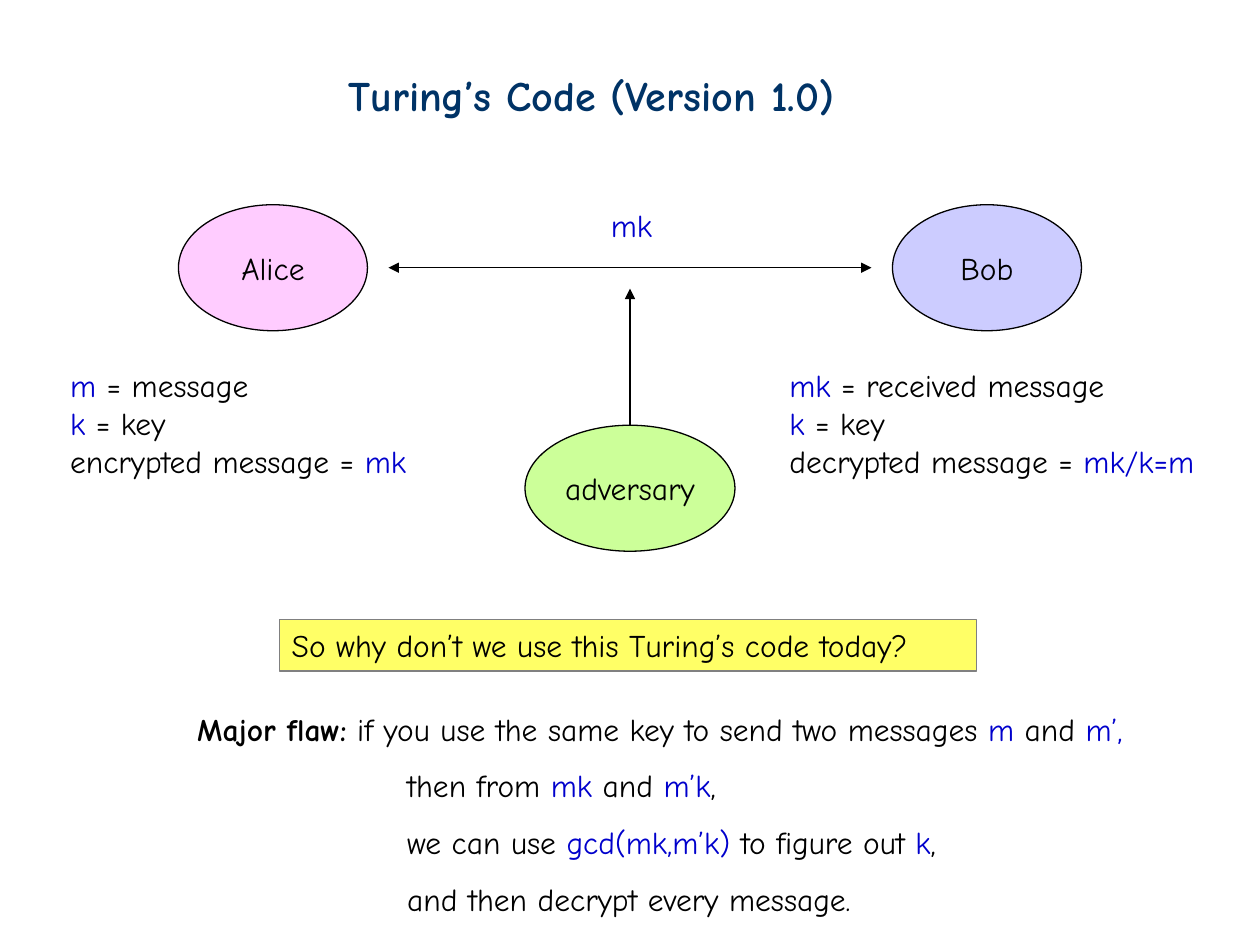
from pptx import Presentation
from pptx.dml.color import RGBColor
from pptx.enum.shapes import MSO_CONNECTOR, MSO_SHAPE
from pptx.enum.text import MSO_ANCHOR, PP_ALIGN
from pptx.oxml.ns import qn
from pptx.util import Inches, Pt
from lxml.etree import SubElement

FONT = "Comic Neue"
BLACK = RGBColor(0x00, 0x00, 0x00)
NAVY = RGBColor(0x00, 0x33, 0x66)
BLUE = RGBColor(0x00, 0x00, 0xCC)
GRAY = RGBColor(0x80, 0x80, 0x80)
PINK = RGBColor(0xFF, 0xCC, 0xFF)
LAVENDER = RGBColor(0xCC, 0xCC, 0xFF)
GREEN = RGBColor(0xCC, 0xFF, 0x99)
YELLOW = RGBColor(0xFF, 0xFF, 0x66)

prs = Presentation()
prs.slide_width, prs.slide_height = Inches(10), Inches(7.5)
slide = prs.slides.add_slide(prs.slide_layouts[6])
shapes = slide.shapes
CELL = prs.slide_width / 120  # grid of 120 columns by 90 rows


def cells(*counts):
    return [round(count * CELL) for count in counts]


def write(frame, lines, size=18, color=BLACK):
    """Fill a frame; within a line, every second part between bars is blue."""
    for number, line in enumerate(lines):
        paragraph = frame.paragraphs[0] if number == 0 else frame.add_paragraph()
        paragraph.font.name = FONT
        paragraph.font.size = Pt(size)
        for index, part in enumerate(line.split("|")):
            if part:
                run = paragraph.add_run()
                run.text = part
                run.font.color.rgb = BLUE if index % 2 else color


# Title
title = shapes.add_textbox(*cells(32, 6, 55.5, 6)).text_frame
title.word_wrap = True
write(title, ["Turing’s Code (Version 1.0)"], 24, NAVY)
title.paragraphs[0].font.bold = True

# Parties, the question, and their outlines
for label, kind, place, fill, outline in [
    ("Alice", MSO_SHAPE.OVAL, (17, 19.5, 18, 12), PINK, BLACK),
    ("Bob", MSO_SHAPE.OVAL, (85, 19.5, 18, 12), LAVENDER, BLACK),
    ("adversary", MSO_SHAPE.OVAL, (50, 40.5, 20, 12), GREEN, BLACK),
    ("So why don’t we use this Turing’s code today?", MSO_SHAPE.RECTANGLE,
     (26.6, 59, 66.4, 4.9), YELLOW, GRAY),
]:
    figure = shapes.add_shape(kind, *cells(*place))
    figure.shadow.inherit = False
    figure.fill.solid()
    figure.fill.fore_color.rgb = fill
    figure.line.color.rgb = outline
    figure.line.width = Pt(0.75)
    frame = figure.text_frame
    is_party = kind == MSO_SHAPE.OVAL
    frame.word_wrap = not is_party
    frame.vertical_anchor = MSO_ANCHOR.MIDDLE if is_party else MSO_ANCHOR.TOP
    write(frame, [label])
    frame.paragraphs[0].alignment = PP_ALIGN.CENTER if is_party else PP_ALIGN.LEFT

# Channel between the parties, and the adversary listening in
for ends, heads in [
    ((37, 25.5, 83, 25.5), ("headEnd", "tailEnd")),
    ((60, 40.5, 60, 27.5), ("tailEnd",)),
]:
    arrow = shapes.add_connector(MSO_CONNECTOR.STRAIGHT, *cells(*ends))
    arrow.line.color.rgb = BLACK
    arrow.line.width = Pt(0.75)
    for head in heads:
        SubElement(arrow.line._get_or_add_ln(), qn(f"a:{head}"), type="triangle")
    SubElement(arrow._element.spPr, qn("a:effectLst"))

# Notes on the channel and under each party
for place, lines in [
    ((57, 19, 8, 4.8), ["|mk"]),
    ((5.5, 34.3, 36.5, 12),
     ["|m| = message", "|k| = key", "encrypted message = |mk"]),
    ((74, 34.3, 44, 12),
     ["|mk| = received message", "|k| = key", "decrypted message = |mk/k=m"]),
]:
    note = shapes.add_textbox(*cells(*place)).text_frame
    note.word_wrap = True
    write(note, lines)

# The flaw: a bold lead-in, then indented lines
flaw = shapes.add_textbox(*cells(17.6, 67, 98, 21)).text_frame
flaw.word_wrap = True
write(flaw, [
    "Major flaw:|| if you use the same key to send two messages |m| and |m’,",
    "then from |mk| and |m’k|,",
    "we can use |gcd(mk,m’k)| to figure out |k|,",
    "and then decrypt every message.",
])
flaw.paragraphs[0].runs[0].font.bold = True
for step in flaw.paragraphs[1:]:
    step.line_spacing = 1.5
    step._p.get_or_add_pPr().set("marL", str(cells(20)[0]))

prs.save("out.pptx")
